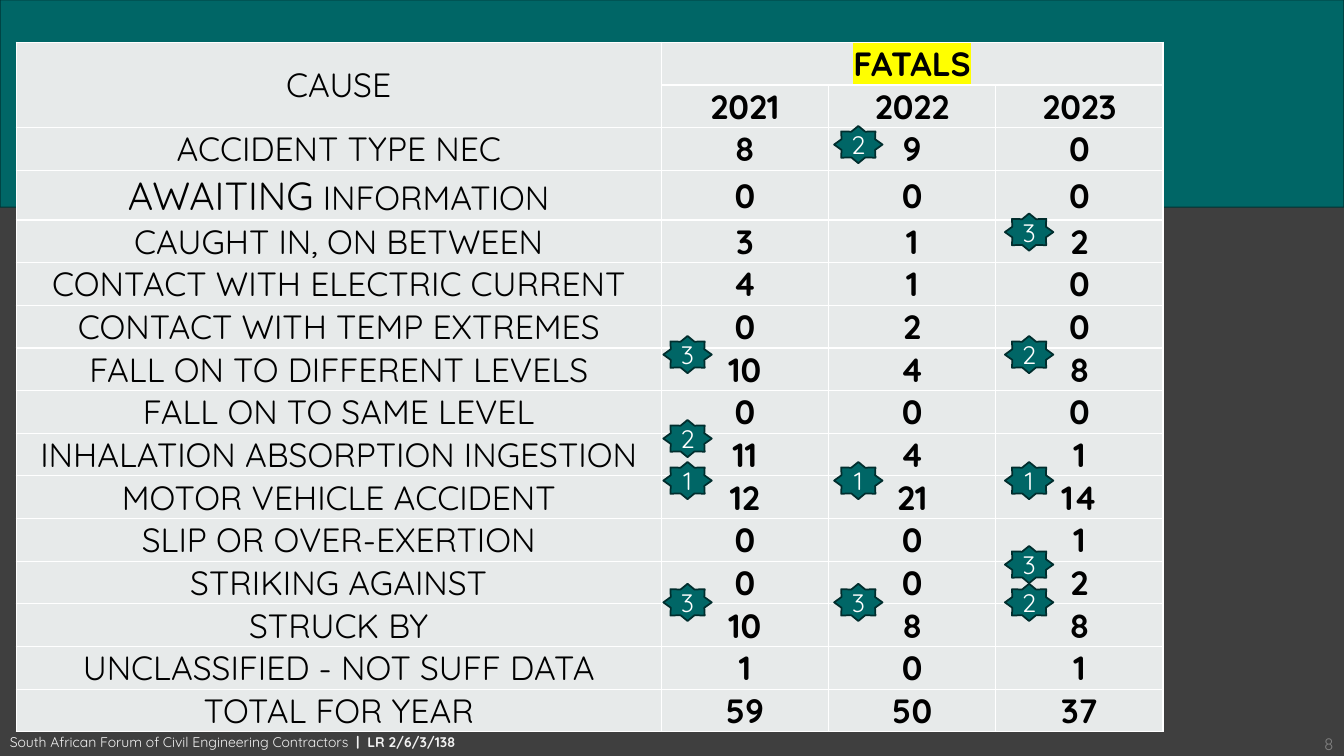
"""Build the slide of fatalities by cause and year, with the worst causes ranked."""
from lxml import etree
from pptx import Presentation
from pptx import util as u
from pptx.dml import color
from pptx.enum import shapes, text
from pptx.oxml import ns

Pt = u.Pt
FONT = "Quicksand"
COLOURS = {
    "slate": "3F3F3F", "teal": "006666", "banner_edge": "003333",
    "star_edge": "002D2D", "cell": "E7EAEA", "white": "FFFFFF",
    "black": "000000", "marker": "FFFF00", "footer": "F2F2F2",
    "number": "808080",
}
YEARS = ["2021", "2022", "2023"]
CAUSES = [
    ("ACCIDENT TYPE NEC", 8, 9, 0),
    ("AWAITING INFORMATION", 0, 0, 0),
    ("CAUGHT IN, ON BETWEEN", 3, 1, 2),
    ("CONTACT WITH ELECTRIC CURRENT", 4, 1, 0),
    ("CONTACT WITH TEMP EXTREMES", 0, 2, 0),
    ("FALL ON TO DIFFERENT LEVELS", 10, 4, 8),
    ("FALL ON TO SAME LEVEL", 0, 0, 0),
    ("INHALATION ABSORPTION INGESTION", 11, 4, 1),
    ("MOTOR VEHICLE ACCIDENT", 12, 21, 14),
    ("SLIP OR OVER-EXERTION", 0, 0, 1),
    ("STRIKING AGAINST", 0, 0, 2),
    ("STRUCK BY", 10, 8, 8),
    ("UNCLASSIFIED - NOT SUFF DATA", 1, 0, 1),
    ("TOTAL FOR YEAR", 59, 50, 37),
]
AWAITING_ROW = 3
RANKS = [
    [(1, 330), (2, 300), (3, 240), (3, 417)],
    [(1, 330), (2, 90), (3, 417)],
    [(2, 240), (1, 330), (2, 417), (3, 152.5), (3, 390)],
]
NOTCH = [(960, 0), (0, 0), (0, 148.3), (157, 148.3), (187.2, 171.4),
         (189.4, 172), (192.2, 172), (194.4, 171.4), (223.9, 148.3),
         (960, 148.3)]


def rgb(name):
    """Return the named colour."""
    return color.RGBColor.from_string(COLOURS[name])


def style_font(font, size, colour, bold=False):
    """Set face, size, colour and weight."""
    font.name, font.size, font.bold = FONT, Pt(size), bold
    font.color.rgb = rgb(colour)


def paint(shape, edge, width):
    """Give a shape the teal fill and an outline, without a shadow."""
    shape.shadow.inherit = False
    shape.fill.solid()
    shape.fill.fore_color.rgb = rgb("teal")
    shape.line.color.rgb = rgb(edge)
    shape.line.width = Pt(width)


def add_banner(slide):
    """Draw the notched band across the top."""
    outline = slide.shapes.build_freeform(*NOTCH[0], scale=Pt(1))
    outline.add_line_segments(NOTCH[1:], close=True)
    paint(outline.convert_to_shape(), "banner_edge", 0.75)


def add_label(slide, box, wording, size, colour):
    """Add a text box and return its frame."""
    frame = slide.shapes.add_textbox(*map(Pt, box)).text_frame
    frame.text = wording
    style_font(frame.paragraphs[0].font, size, colour)
    return frame


def add_footer(slide):
    """Add the forum's line and the page number."""
    forum = add_label(slide, (0, 520.5, 355, 20),
                      "South African Forum of Civil Engineering Contractors",
                      10, "footer")
    reference = forum.paragraphs[0].add_run()
    reference.text = "  |  LR 2/6/3/138"
    reference.font.bold = True

    number = add_label(slide, (876.2, 500.4, 83.5, 38.9), "8", 12, "number")
    number.word_wrap = True
    number.vertical_anchor = text.MSO_ANCHOR.BOTTOM
    number.margin_bottom = Pt(0.7)
    number.paragraphs[0].alignment = text.PP_ALIGN.RIGHT


def format_cell(cell):
    """Set a cell's fill, margins and white borders."""
    cell.fill.solid()
    cell.fill.fore_color.rgb = rgb("cell")
    cell.vertical_anchor = text.MSO_ANCHOR.MIDDLE
    cell.margin_left = cell.margin_right = cell.margin_top = Pt(0.5)
    cell.margin_bottom = 0
    properties = cell._tc.get_or_add_tcPr()
    for place, side in enumerate(("lnL", "lnR", "lnT", "lnB")):
        border = etree.Element(ns.qn(f"a:{side}"), w=str(Pt(1)))
        fill = etree.SubElement(border, ns.qn("a:solidFill"))
        etree.SubElement(fill, ns.qn("a:srgbClr"), val=COLOURS["white"])
        properties.insert(place, border)


def write_cell(cell, pieces, bold):
    """Write centred pieces of text, each with an optional size of its own."""
    paragraph = cell.text_frame.paragraphs[0]
    paragraph.alignment = text.PP_ALIGN.CENTER
    style_font(paragraph.font, 24, "black", bold)
    for wording, size in pieces:
        run = paragraph.add_run()
        run.text = wording
        if size:
            run.font.size = Pt(size)


def highlight(run):
    """Mark a run in yellow."""
    mark = etree.SubElement(run.font._element, ns.qn("a:highlight"))
    etree.SubElement(mark, ns.qn("a:srgbClr"), val=COLOURS["marker"])


def add_fatals_table(slide):
    """Add the table of fatalities by cause and year."""
    rows = [("CAUSE", "FATALS", "", ""), ("", *YEARS), *CAUSES]
    fatals = slide.shapes.add_table(
        len(rows), 4, Pt(11.5), Pt(30.2), Pt(819.3), Pt(493)).table
    fatals.first_row = fatals.horz_banding = False
    for column, width in zip(fatals.columns, (460.8, 119.5, 119.5, 119.5)):
        column.width = Pt(width)
    for r, values in enumerate(rows):
        fatals.rows[r].height = Pt(35.5 if r == AWAITING_ROW else 30.5)
        for c, value in enumerate(values):
            cell = fatals.cell(r, c)
            format_cell(cell)
            pieces = [(str(value), None)]
            if r == AWAITING_ROW and c == 0:
                first, rest = value.split(" ")
                pieces = [(first, 28), (" " + rest, 24)]
            if value != "":
                write_cell(cell, pieces, bold=c > 0)
    fatals.cell(0, 0).merge(fatals.cell(1, 0))
    fatals.cell(0, 1).merge(fatals.cell(0, 3))
    highlight(fatals.cell(0, 1).text_frame.paragraphs[0].runs[0])


def add_rank_star(slide, left, top, rank):
    """Add a star that shows a cause's rank for the year."""
    star = slide.shapes.add_shape(shapes.MSO_SHAPE.STAR_8_POINT,
                                  Pt(left), Pt(top), Pt(34.6), Pt(26.6))
    paint(star, "star_edge", 1.25)
    frame = star.text_frame
    frame.word_wrap = False
    frame.vertical_anchor = text.MSO_ANCHOR.MIDDLE
    frame.text = str(rank)
    frame.paragraphs[0].alignment = text.PP_ALIGN.CENTER
    style_font(frame.paragraphs[0].font, 18, "white")


def main():
    """Build and save the slide."""
    deck = Presentation()
    deck.slide_width, deck.slide_height = Pt(960), Pt(540)
    slide = deck.slides.add_slide(deck.slide_layouts[6])
    slide.background.fill.solid()
    slide.background.fill.fore_color.rgb = rgb("slate")
    add_banner(slide)
    add_footer(slide)
    add_fatals_table(slide)
    for year, ranks in enumerate(RANKS):
        for rank, top in ranks:
            add_rank_star(slide, 473.8 + 122 * year, top, rank)
    deck.save("out.pptx")


if __name__ == "__main__":
    main()
